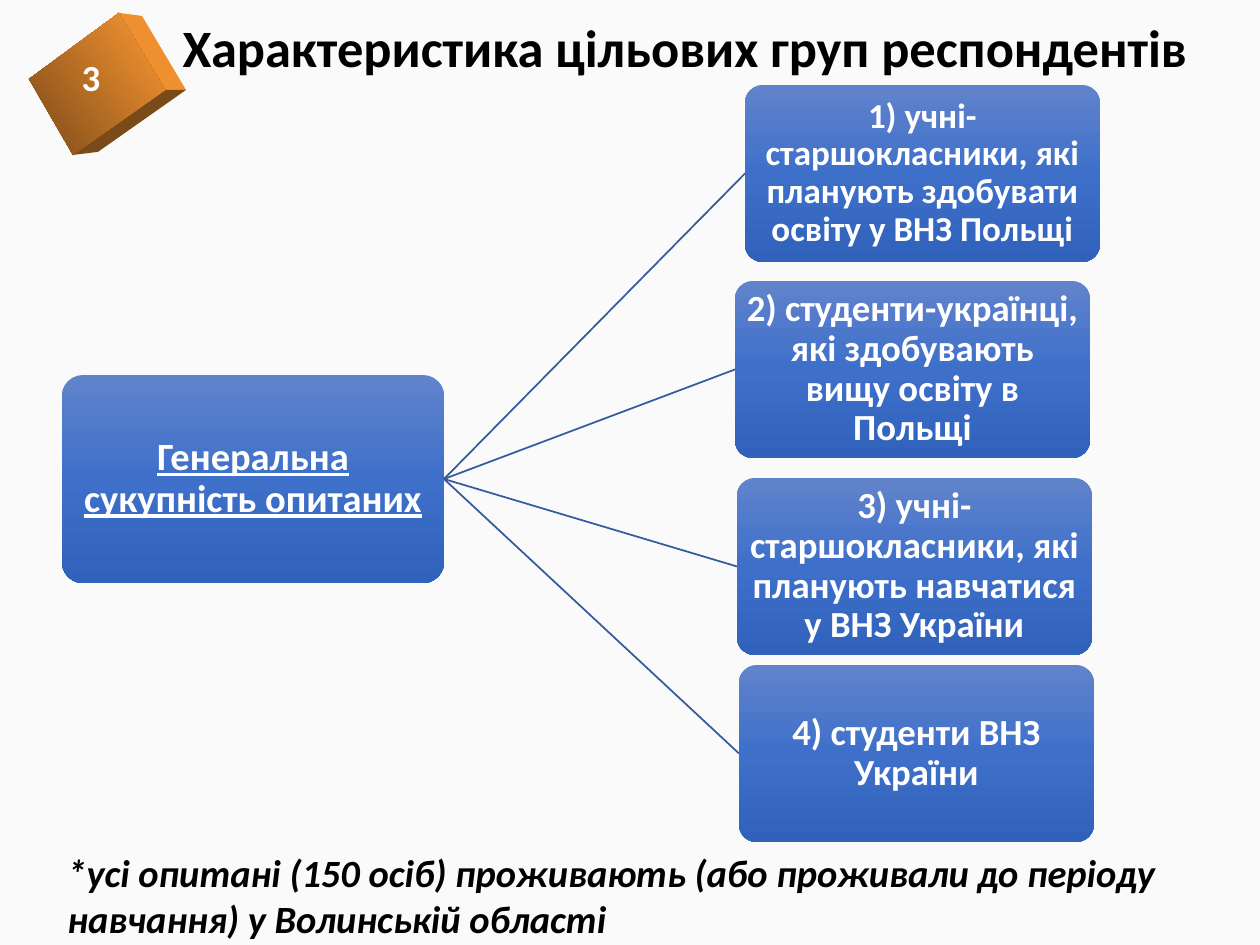
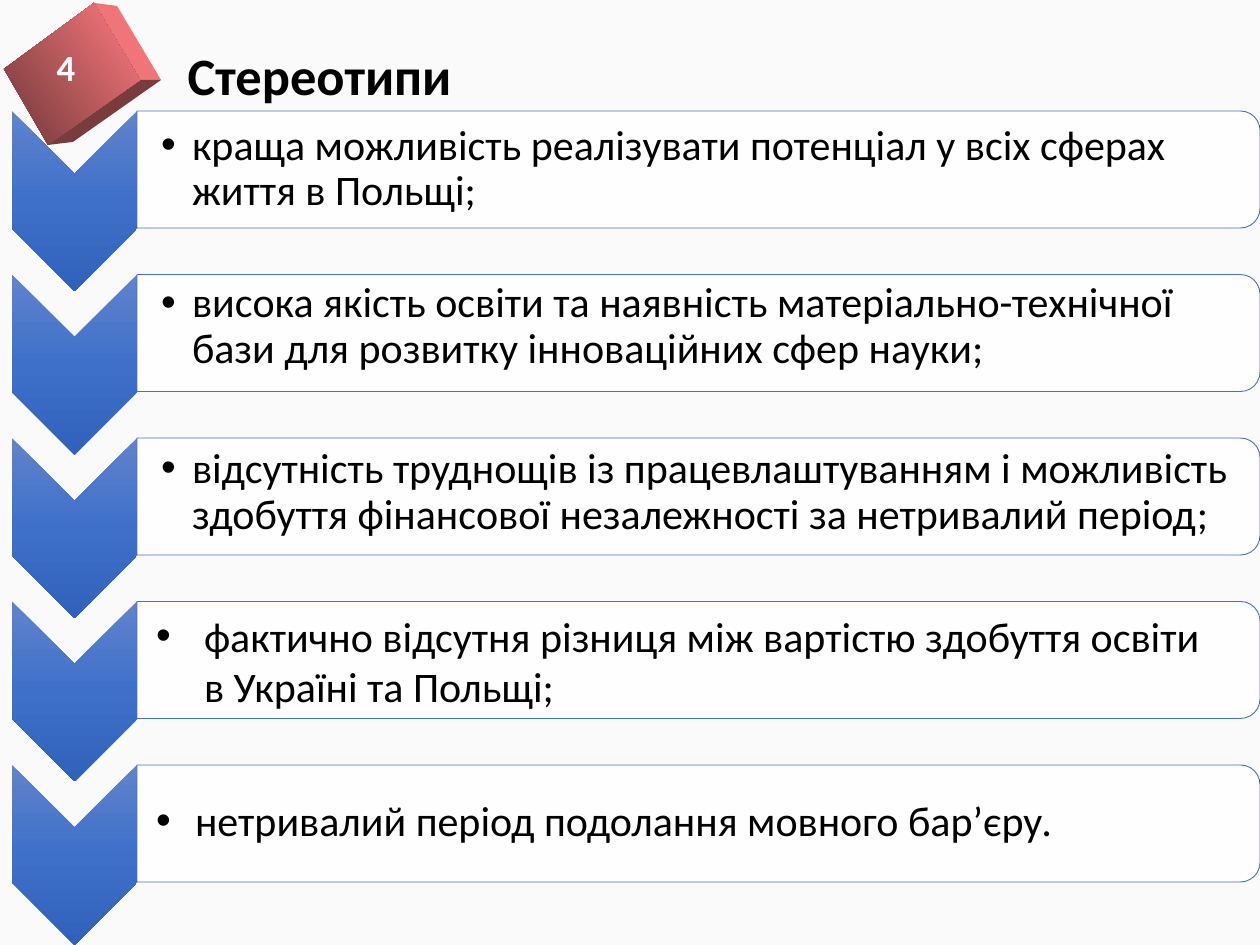
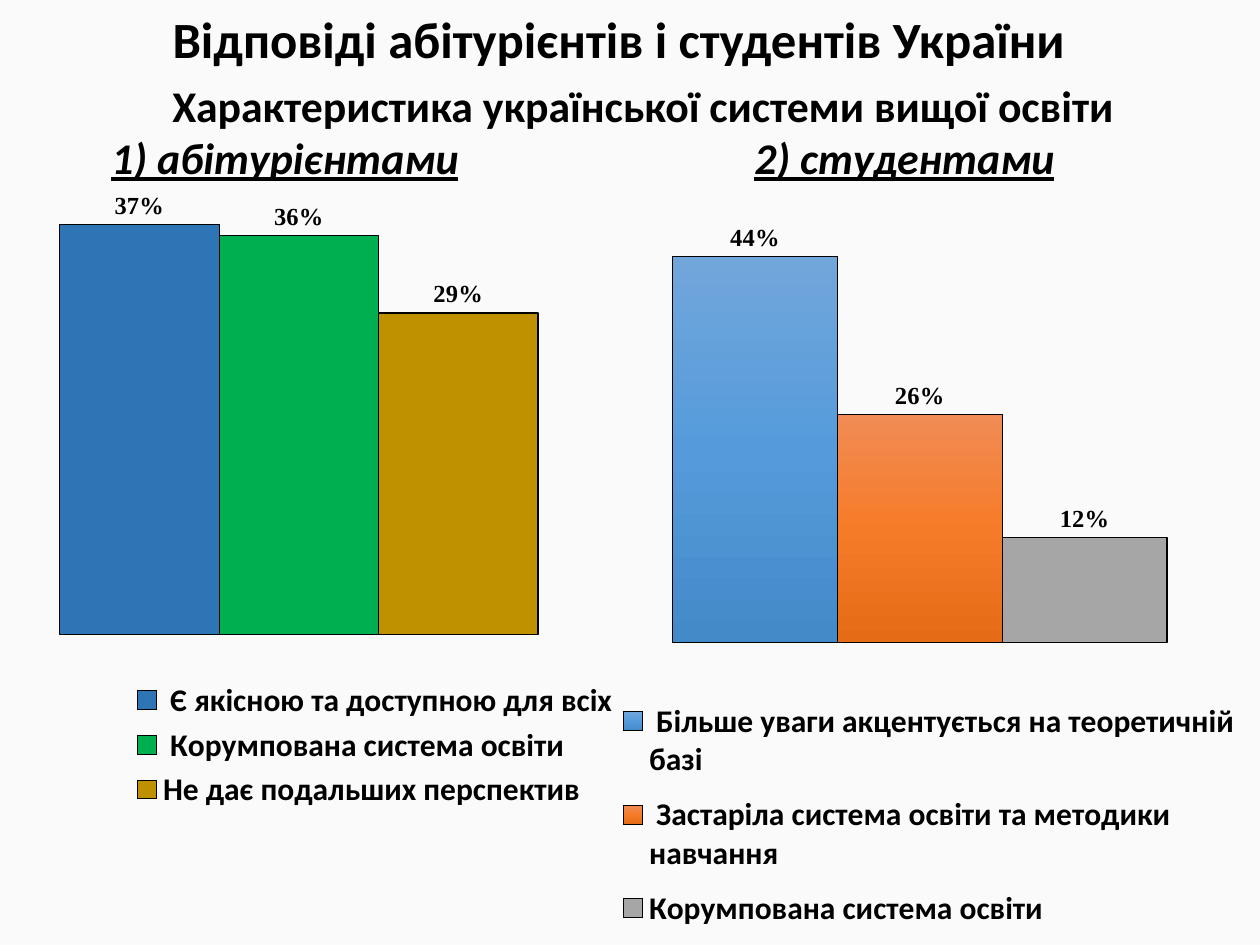
from lxml.etree import SubElement
from pptx import Presentation
from pptx.chart.data import CategoryChartData
from pptx.dml.color import RGBColor
from pptx.enum.chart import XL_CHART_TYPE as Kind, XL_LABEL_POSITION as Spot
from pptx.enum.chart import XL_LEGEND_POSITION as Side
from pptx.enum.shapes import MSO_CONNECTOR as Link, MSO_SHAPE as Form
from pptx.enum.text import MSO_ANCHOR as Anchor, MSO_AUTO_SIZE as Fit, PP_ALIGN as Align
from pptx.oxml.ns import qn
from pptx.util import Emu, Pt

SCALE = 914400 / 126  # EMU in one px
COLORS = {
    "page": "FAFAFA", "ink": "000000", "white": "FFFFFF",
    "link": "365B9D", "edge": "4472C4",
    "blue": "2E75B6", "green": "00B050", "gold": "BF9000", "gray": "A6A6A6",
}
BLENDS = {
    "box": ("6183CB", "3E70CA", "3062BB"),
    "orange": ("7A4A18", "FF9933"), "pink": ("703638", "FF7C80"),
    "sky": ("71A6DB", "559BDB", "438AC9"),
    "flame": ("F18C55", "F67B28", "E56B17"),
}
SIDES = {"orange": ("EF9030", "7A4A18"), "pink": ("F07579", "7A3B3D")}
BASE = {"name": "Calibri", "bold": True}


def px(n):
    return Emu(round(n * SCALE))


def rgb(key):
    return RGBColor.from_string(COLORS.get(key, key))


def style(font, color="ink", **fmt):
    for key, val in {**BASE, **fmt}.items():
        setattr(font, key, Pt(val) if key == "size" else val)
    font.color.rgb = rgb(color)


def paint(fill, node, key, angle=270):
    """Fill with a named blend, or else with a plain colour."""
    if key not in BLENDS:
        fill.solid()
        fill.fore_color.rgb = rgb(key)
        return
    fill.gradient()
    fill.gradient_angle = angle
    stops = node.find(".//" + qn("a:gsLst"))
    for old in list(stops):
        stops.remove(old)
    tones = BLENDS[key]
    for i, tone in enumerate(tones):
        stop = SubElement(stops, qn("a:gs"), pos=str(100000 * i // (len(tones) - 1)))
        SubElement(stop, qn("a:srgbClr"), val=tone)


def place(node, index, area, rect, inner=False):
    """Give a chart part a fixed place, with rect in slide px."""
    for old in node.findall(qn("c:layout")):
        node.remove(old)
    lay = node.makeelement(qn("c:layout"))
    node.insert(index, lay)
    man = SubElement(lay, qn("c:manualLayout"))
    left, top, width, height = area
    vals = {"xMode": "edge", "yMode": "edge",
            "x": (rect[0] - left) / width, "y": (rect[1] - top) / height,
            "w": rect[2] / width, "h": rect[3] / height}
    if inner:
        vals = {"layoutTarget": "inner", **vals}
    for tag, val in vals.items():
        SubElement(man, qn("c:" + tag), val=str(val))


class Deck:
    def __init__(self):
        self.prs = Presentation()
        self.prs.slide_width, self.prs.slide_height = px(1260), px(945)
        back = self.prs.slide_master.background.fill
        back.solid()
        back.fore_color.rgb = rgb("page")

    def page(self, title, left, top, size=30, layout=5):
        self.slide = self.prs.slides.add_slide(self.prs.slide_layouts[layout])
        self.shapes = self.slide.shapes
        head = self.shapes.title
        self.move(head, (left, top, 1080, 77))
        self.label(head, title, size=size)

    def move(self, item, area):
        for key, val in zip(("left", "top", "width", "height"), area):
            setattr(item, key, px(val))

    def frame(self, item, anchor=Anchor.TOP, pads=None):
        frame = item.text_frame
        frame.word_wrap, frame.auto_size = True, Fit.NONE
        frame.vertical_anchor = anchor
        if pads is not None:
            for side, val in zip(("left", "top", "right", "bottom"), pads):
                setattr(frame, "margin_" + side, px(val))
        return frame

    def label(self, item, text, align=Align.LEFT, anchor=Anchor.TOP,
              pads=None, lines=1.0, **fmt):
        para = self.frame(item, anchor, pads).paragraphs[0]
        para.text, para.alignment, para.line_spacing = text, align, lines
        style(para.runs[0].font, **fmt)

    def text(self, text, area, **fmt):
        self.label(self.shapes.add_textbox(*map(px, area)), text, **fmt)

    def shape(self, form, area, fill, turn=0, angle=270, edge=None):
        item = self.shapes.add_shape(form, *map(px, area))
        item.rotation = turn
        return self.finish(item, fill, angle, edge)

    def finish(self, item, fill, angle=270, edge=None):
        item.shadow.inherit = False
        paint(item.fill, item._element.spPr, fill, angle)
        if edge:
            item.line.color.rgb, item.line.width = rgb(edge), Pt(0.5)
        else:
            item.line.fill.background()
        return item

    def upright(self, form, area, fill, **opts):
        """Shape turned by 90 degrees that covers the given area."""
        x, y, w, h = area
        return self.shape(form, (x + (w - h) / 2, y + (h - w) / 2, h, w),
                          fill, turn=90, **opts)

    def box(self, text, area, pad, **fmt):
        item = self.shape(Form.ROUNDED_RECTANGLE, area, "box")
        item.adjustments[0] = 0.1
        self.label(item, text, align=Align.CENTER, anchor=Anchor.MIDDLE,
                   pads=[pad] * 4, lines=0.9, color="white", **fmt)
        return item

    def join(self, start, end):
        line = self.shapes.add_connector(Link.STRAIGHT, 0, 0, 0, 0)
        line.begin_connect(start, 3)
        line.end_connect(end, 1)
        line.line.color.rgb, line.line.width = rgb("link"), Pt(1)
        SubElement(line._element.spPr, qn("a:effectLst"))

    def face(self, points, fill):
        pen = self.shapes.build_freeform(*points[0], scale=SCALE)
        pen.add_line_segments(points[1:])
        return self.finish(pen.convert_to_shape(), fill, angle=36)

    def cube(self, num, left, top, hue):
        def at(*points):
            return [(left + x, top + y) for x, y in points]
        side, base = SIDES[hue]
        self.face(at((90, 0), (113, 3), (157, 77), (136, 77)), side)
        self.face(at((136, 77), (157, 77), (69, 139), (44, 142)), base)
        front = self.face(at((0, 66), (90, 0), (136, 77), (44, 142)), hue)
        self.label(front, num, align=Align.CENTER, anchor=Anchor.MIDDLE,
                   pads=(0, 0, 12, 14), size=21, color="white")

    def bullets(self, area, items, **fmt):
        body = self.slide.placeholders[1]
        self.move(body, area)
        self.shapes._spTree.append(body._element)  # bring to front
        frame = self.frame(body, pads=[0] * 4)
        for i, (text, gap, left, hang, lines) in enumerate(items):
            para = frame.add_paragraph() if i else frame.paragraphs[0]
            para.text = text
            props = para._p.get_or_add_pPr()
            props.set("marL", str(px(left)))
            props.set("indent", str(-px(hang)))
            SubElement(props, qn("a:buChar"), char="•")
            para.line_spacing, para.space_before = lines, px(gap)
            for run in para.runs:
                style(run.font, **fmt)

    def chart(self, area, plot, key, top, rows):
        data = CategoryChartData(number_format="0%")
        data.categories = ["1"]
        for name, val, _ in rows:
            data.add_series(name, [val])
        chart = self.shapes.add_chart(Kind.COLUMN_CLUSTERED, *map(px, area), data).chart
        chart.has_title, chart.has_legend = False, True
        style(chart.font, name="Times New Roman", size=14)

        # Hidden axes
        axis = chart.value_axis
        axis.minimum_scale, axis.maximum_scale = 0, top
        axis.has_major_gridlines = False
        axis.visible = chart.category_axis.visible = False

        # Columns and labels
        bars = chart.plots[0]
        bars.gap_width, bars.overlap, bars.vary_by_categories = 75, 0, False
        bars.has_data_labels = True
        tags = bars.data_labels
        for name, val in {"number_format": "0%", "number_format_is_linked": False,
                          "position": Spot.OUTSIDE_END, "show_value": True}.items():
            setattr(tags, name, val)
        style(tags.font, name="Times New Roman", size=14)
        for ser, (_, _, hue) in zip(bars.series, rows):
            ser.invert_if_negative = False
            paint(ser.format.fill, ser._element, hue)
            ser.format.line.color.rgb = rgb("ink")
            ser.format.line.width = Pt(0.75)

        # Legend and places
        legend = chart.legend
        legend.position, legend.include_in_layout = Side.BOTTOM, False
        style(legend.font, size=18)
        place(legend._element, 1, area, key)
        place(chart._chartSpace.find(".//" + qn("c:plotArea")), 0, area, plot, inner=True)


def groups(deck):
    deck.page("Характеристика цільових груп респондентів", 170, 9)
    root = deck.box("Генеральна сукупність опитаних", (62, 375, 382, 208), 8,
                    size=22, underline=True)
    for text, left, top, size in (
        ("1) учні-старшокласники, які планують здобувати освіту у ВНЗ Польщі", 745, 85, 20),
        ("2) студенти-українці, які здобувають вищу освіту в Польщі", 735, 281, 21),
        ("3) учні-старшокласники, які планують навчатися у ВНЗ України", 737, 478, 21),
        ("4) студенти ВНЗ України", 739, 665, 21),
    ):
        deck.join(root, deck.box(text, (left, top, 355, 177), 6, size=size))
    deck.text("*усі опитані (150 осіб) проживають (або проживали до періоду "
              "навчання) у Волинській області", (55, 843, 1205, 102), size=22, italic=True)
    deck.cube("3", 29, 13, "orange")


def myths(deck):
    deck.page("Стереотипи", 175, 37, layout=1)
    for row in range(5):
        top = 111 + 163.5 * row
        deck.upright(Form.CHEVRON, (12, top, 125, 180), "box", angle=0)
        bar = deck.upright(Form.ROUND_2_SAME_RECTANGLE, (137, top, 1123, 117),
                           "white", edge="edge")
        tone = bar._element.spPr.find(qn("a:solidFill"))[0]
        SubElement(tone, qn("a:alpha"), val="90000")
    # Text, gap above, left indent, hanging indent, line spacing
    deck.bullets((156, 124, 1095, 750), (
        ("краща можливість реалізувати потенціал у всіх сферах життя в Польщі;",
         0, 36, 31, 0.9),
        ("висока якість освіти та наявність матеріально-технічної бази для "
         "розвитку інноваційних сфер науки;", 67, 36, 31, 0.9),
        ("відсутність труднощів із працевлаштуванням і можливість здобуття "
         "фінансової незалежності за нетривалий період;", 75, 36, 31, 0.9),
        ("фактично відсутня різниця між вартістю здобуття освіти\v"
         "в Україні та Польщі;", 72, 48, 48, 1.0),
        ("нетривалий період подолання мовного бар’єру.", 84, 39, 39, 1.0),
    ), size=24, bold=False)
    deck.cube("4", 4, 3, "pink")


def answers(deck):
    deck.page("Відповіді абітурієнтів і студентів України", 160, 1, size=29)
    deck.text("Характеристика української системи вищої освіти",
              (160, 73, 1080, 65), size=25)
    for text, left in (("1) абітурієнтами", 99), ("2) студентами", 742)):
        deck.text(text, (left, 125, 450, 65), size=25, italic=True, underline=True)
    deck.chart((0, 179, 798, 702), (0, 191, 598, 444), (125, 675, 500, 140), 0.4, (
        (" Є якісною та доступною для всіх", 0.37, "blue"),
        (" Корумпована система освіти", 0.36, "green"),
        ("Не дає подальших перспектив", 0.29, "gold"),
    ))
    deck.chart((588, 190, 656, 755), (611, 204, 618, 439), (615, 685, 628, 260), 0.5, (
        (" Більше уваги акцентується на теоретичній базі", 0.44, "sky"),
        (" Застаріла система освіти та методики навчання", 0.26, "flame"),
        ("Корумпована система освіти", 0.12, "gray"),
    ))


def main():
    deck = Deck()
    for build in (groups, myths, answers):
        build(deck)
    deck.prs.save("out.pptx")


if __name__ == "__main__":
    main()
